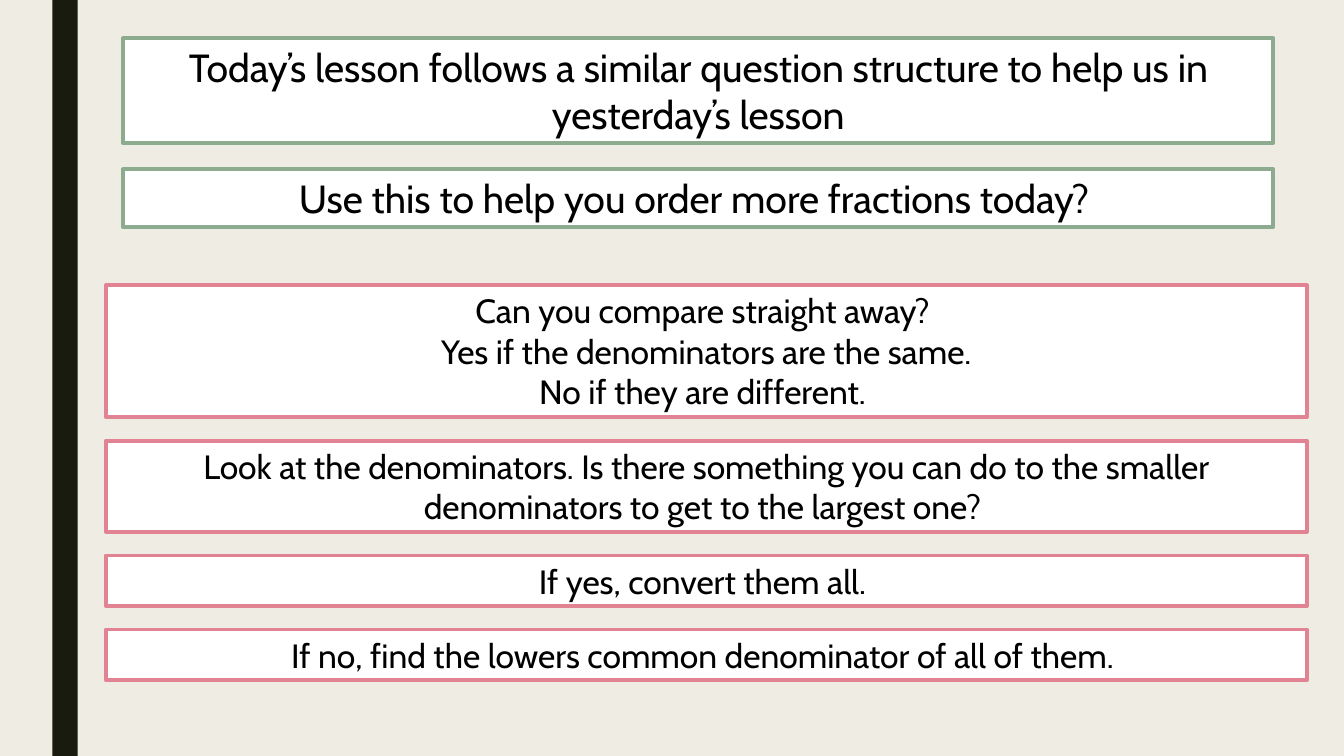
from pptx import Presentation
from pptx.dml.color import RGBColor
from pptx.enum.shapes import MSO_SHAPE as Shape
from pptx.enum.text import MSO_ANCHOR as Anchor, MSO_AUTO_SIZE as Fit, PP_ALIGN as Align
from pptx.util import Inches, Pt

CREAM = RGBColor(0xEF, 0xED, 0xE3)
DARK = RGBColor(0x19, 0x1B, 0x0E)
WHITE = RGBColor(0xFF, 0xFF, 0xFF)
BLACK = RGBColor(0x00, 0x00, 0x00)
GREEN = RGBColor(0x8D, 0xAB, 0x8E)
PINK = RGBColor(0xE2, 0x83, 0x94)

FRAME = {"word_wrap": True, "auto_size": Fit.SHAPE_TO_FIT_TEXT, "vertical_anchor": Anchor.TOP}
LINE = 0.224
PAD = 1.33

INTRO = [
    (2, ["Today’s lesson follows a similar question structure to help us in yesterday’s lesson"]),
    (1, ["Use this to help you order more fractions today? "]),
]
STEPS = [
    (3, ["Can you compare straight away? ",
         "Yes if the denominators are the same.",
         "No if they are different. "]),
    (2, ["Look at the denominators. Is there something you can do to the smaller "
         "denominators to get to the largest one? "]),
    (1, ["If yes, convert them all. "]),
    (1, ["If no, find the lowers common denominator of all of them. "]),
]


def apply(item, values):
    for name, value in values.items():
        setattr(item, name, value)


class Deck:
    def __init__(self):
        self.show = Presentation()
        apply(self.show, {"slide_width": Inches(13.33), "slide_height": Inches(7.5)})
        self.slide = self.show.slides.add_slide(self.show.slide_layouts[5])
        self.paint(self.slide.background.fill, CREAM)

    def paint(self, fill, color):
        fill.solid()
        fill.fore_color.rgb = color

    def area(self, left, top, width, height):
        wide, high = self.show.slide_width, self.show.slide_height
        sizes = (left * wide, top * high, width * wide, height * high)
        return [round(size / 100) for size in sizes]

    def rect(self, *place):
        shape = self.slide.shapes.add_shape(Shape.RECTANGLE, *self.area(*place))
        shape.shadow.inherit = False
        return shape

    def bar(self, *place):
        shape = self.rect(*place)
        self.paint(shape.fill, DARK)
        shape.line.fill.background()

    def title(self, *place):
        shape = self.slide.shapes.title
        apply(shape, dict(zip(("left", "top", "width", "height"), self.area(*place))))
        return shape

    def card(self, shape, texts, size, color):
        self.paint(shape.fill, WHITE)
        self.paint(shape.line.fill, color)
        shape.line.width = Pt(2.75)
        frame = shape.text_frame
        apply(frame, FRAME)
        frame.text = "\n".join(texts)
        for para in frame.paragraphs:
            para.alignment = Align.CENTER
            font = para.runs[0].font
            apply(font, {"name": "Cabin", "size": Pt(size)})
            font.color.rgb = BLACK

    def stack(self, cards, left, top, width, gap, size, color, head=False):
        for index, (lines, texts) in enumerate(cards):
            height = lines * size * LINE + PAD
            make = self.title if head and index == 0 else self.rect
            self.card(make(left, top, width, height), texts, size, color)
            top += height + gap


def main():
    deck = Deck()
    deck.bar(3.9, 0, 1.88, 100)
    deck.stack(INTRO, 9.15, 5.07, 85.6, 3.47, 28, GREEN, head=True)
    deck.stack(STEPS, 7.88, 37.73, 89.35, 3.1, 24, PINK)
    deck.show.save("out.pptx")


if __name__ == "__main__":
    main()
